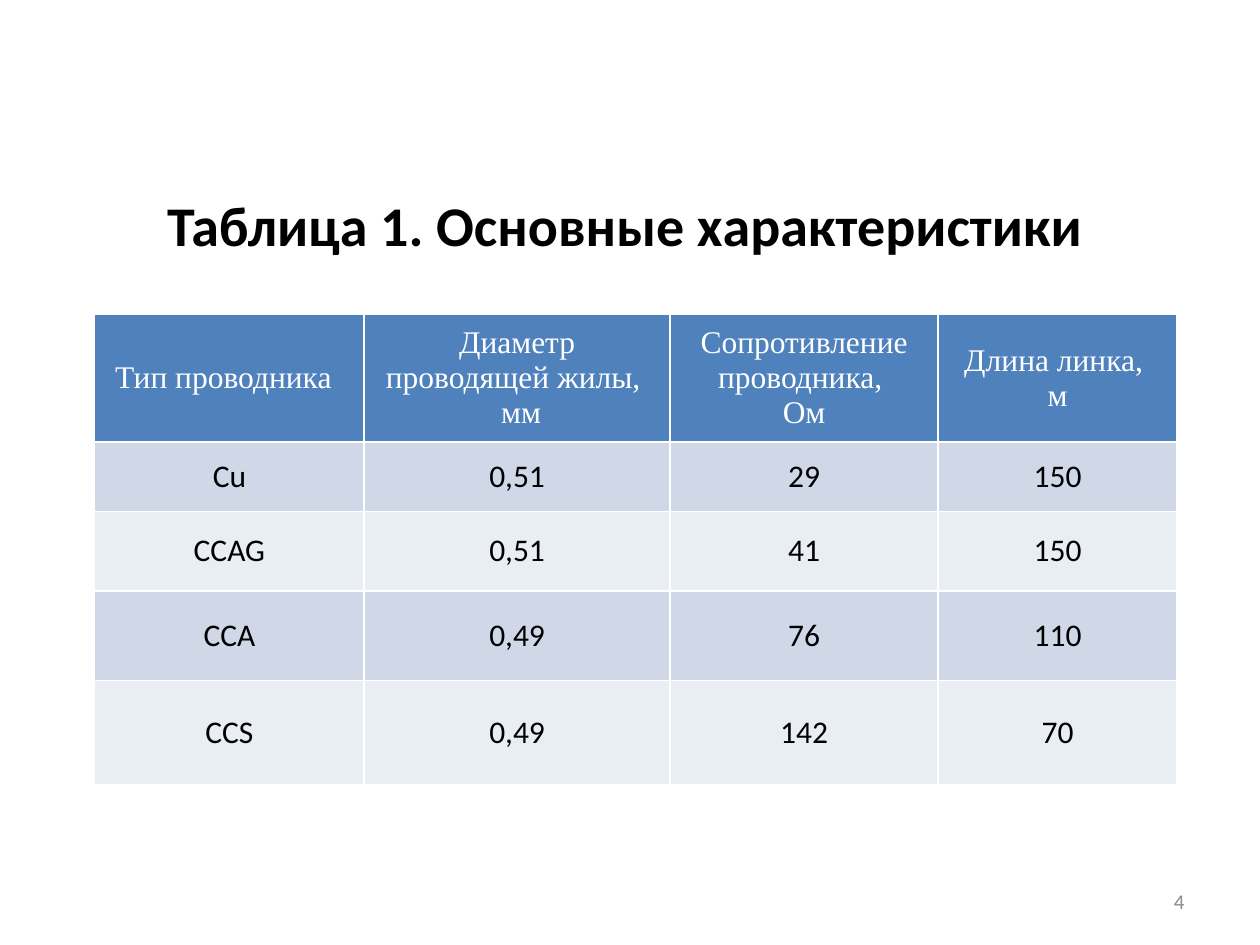
from pptx import Presentation
from pptx.dml.color import RGBColor
from pptx.enum.text import MSO_ANCHOR, PP_ALIGN
from pptx.util import Cm, Pt

BLACK = RGBColor(0x00, 0x00, 0x00)
WHITE = RGBColor(0xFF, 0xFF, 0xFF)
GRAY = RGBColor(0x8C, 0x8C, 0x8C)
HEADER_BLUE = RGBColor(0x4F, 0x81, 0xBD)
BAND_COLORS = [RGBColor(0xE9, 0xED, 0xF4), RGBColor(0xD0, 0xD8, 0xE8)]

TITLE_FORMAT = {"name": "Calibri", "size": Pt(32), "bold": True}
HEADER_FORMAT = {"name": "Times New Roman", "size": Pt(18), "bold": False}
BODY_FORMAT = {"name": "Calibri", "size": Pt(18), "bold": False}
NUMBER_FORMAT = {"name": "Calibri", "size": Pt(12), "bold": False}

ROWS = [
    [" Тип проводника", "Диаметр проводящей жилы, \n мм",
     "Сопротивление проводника, \nОм", "Длина линка, \nм"],
    ["Cu", "0,51", "29", "150"],
    ["CCAG", "0,51", "41", "150"],
    ["CCA", "0,49", "76", "110"],
    ["CCS", "0,49", "142", "70"],
]
COLUMN_WIDTHS = [5.43, 6.17, 5.4, 4.82]
ROW_HEIGHTS = [2.58, 1.4, 1.6, 1.81, 2.1]


def format_text(text_frame, font_format, color, alignment):
    for paragraph in text_frame.paragraphs:
        paragraph.alignment = alignment
        for run in paragraph.runs:
            for attribute, value in font_format.items():
                setattr(run.font, attribute, value)
            run.font.color.rgb = color


presentation = Presentation()
presentation.slide_width = Cm(25.4)
presentation.slide_height = Cm(19.05)
slide = presentation.slides.add_slide(presentation.slide_layouts[5])

title = slide.shapes.title
title.left, title.top, title.width, title.height = Cm(1.3), Cm(2.92), Cm(22.86), Cm(3.18)
title.text_frame.text = "Таблица 1. Основные характеристики "
title.text_frame.vertical_anchor = MSO_ANCHOR.MIDDLE
format_text(title.text_frame, TITLE_FORMAT, BLACK, PP_ALIGN.CENTER)

table_shape = slide.shapes.add_table(
    len(ROWS), len(COLUMN_WIDTHS), Cm(1.91), Cm(6.33),
    Cm(sum(COLUMN_WIDTHS)), Cm(sum(ROW_HEIGHTS)))
table = table_shape.table
for column, width in zip(table.columns, COLUMN_WIDTHS):
    column.width = Cm(width)

for row_index, (row, height, texts) in enumerate(zip(table.rows, ROW_HEIGHTS, ROWS)):
    row.height = Cm(height)
    is_header = row_index == 0
    for column_index, (cell, text) in enumerate(zip(row.cells, texts)):
        cell.text = text
        cell.vertical_anchor = MSO_ANCHOR.MIDDLE
        cell.fill.solid()
        cell.fill.fore_color.rgb = HEADER_BLUE if is_header else BAND_COLORS[row_index % 2]
        is_corner = is_header and column_index == 0
        format_text(cell.text_frame,
                    HEADER_FORMAT if is_header else BODY_FORMAT,
                    WHITE if is_header else BLACK,
                    PP_ALIGN.LEFT if is_corner else PP_ALIGN.CENTER)

number_box = slide.shapes.add_textbox(Cm(18.2), Cm(17.66), Cm(5.93), Cm(1.01))
number_box.text_frame.word_wrap = True
number_box.text_frame.text = "4"
number_box.text_frame.vertical_anchor = MSO_ANCHOR.MIDDLE
format_text(number_box.text_frame, NUMBER_FORMAT, GRAY, PP_ALIGN.RIGHT)

presentation.save("out.pptx")
